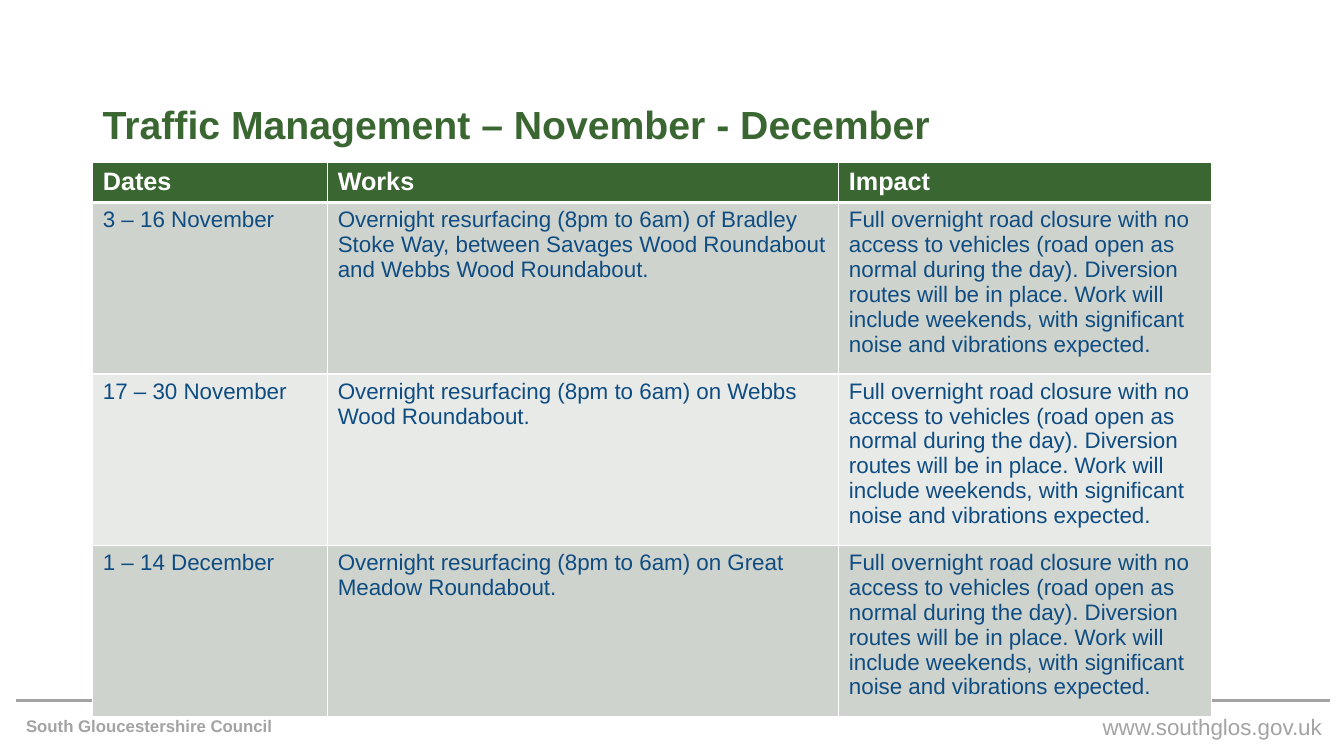
from lxml.etree import SubElement
from pptx import Presentation
from pptx.dml.color import RGBColor
from pptx.enum.shapes import MSO_CONNECTOR
from pptx.enum.text import MSO_ANCHOR, PP_ALIGN
from pptx.oxml.ns import qn
from pptx.util import Inches, Pt

COLOURS = {
    "green": "396631",
    "blue": "0F4C81",
    "grey": "A3A3A3",
    "white": "FFFFFF",
    "dark_band": "CED3CE",
    "light_band": "E8EAE8",
}
HEADINGS = ["Dates", "Works", "Impact"]
IMPACT = (
    "Full overnight road closure with no access to vehicles (road open as normal "
    "during the day). Diversion routes will be in place. Work will include weekends, "
    "with significant noise and vibrations expected."
)
CLOSURES = [
    (
        "3 – 16 November",
        "Overnight resurfacing (8pm to 6am) of Bradley Stoke Way, between "
        "Savages Wood Roundabout and Webbs Wood Roundabout.",
    ),
    ("17 – 30 November", "Overnight resurfacing (8pm to 6am) on Webbs Wood Roundabout."),
    ("1 – 14 December", "Overnight resurfacing (8pm to 6am) on Great Meadow Roundabout."),
]
COLUMN_WIDTHS = [2.33, 5.07, 3.7]
HEADING_HEIGHT = 0.38
CLOSURE_HEIGHT = 1.66


def colour(name):
    return RGBColor.from_string(COLOURS[name])


def write(frame, text, size, ink, bold=False, align=PP_ALIGN.LEFT, spacing=None):
    frame.word_wrap = True
    paragraph = frame.paragraphs[0]
    paragraph.alignment = align
    if spacing:
        paragraph.line_spacing = spacing
    run = paragraph.add_run()
    run.text = text
    run.font.name = "Arial"
    run.font.size = Pt(size)
    run.font.bold = bold
    run.font.color.rgb = colour(ink)


def add_label(slide, left, top, width, height, text, anchor=MSO_ANCHOR.MIDDLE, **style):
    label = slide.shapes.add_textbox(Inches(left), Inches(top), Inches(width), Inches(height))
    label.text_frame.vertical_anchor = anchor
    write(label.text_frame, text, **style)


def add_footer_rule(slide):
    rule = slide.shapes.add_connector(
        MSO_CONNECTOR.STRAIGHT, Inches(0.16), Inches(6.95), Inches(13.19), Inches(6.95)
    )
    rule.line.color.rgb = colour("grey")
    rule.line.width = Pt(0)
    SubElement(rule._element.spPr, qn("a:effectLst"))


def add_borders(cell, top, bottom):
    properties = cell._tc.get_or_add_tcPr()
    for side, width in (("L", 1), ("R", 1), ("T", top), ("B", bottom)):
        border = SubElement(properties, qn(f"a:ln{side}"), w=str(Pt(width)))
        fill = SubElement(border, qn("a:solidFill"))
        SubElement(fill, qn("a:srgbClr"), val=COLOURS["white"])


def fill_row(row, texts, band, top=1, bottom=1, **style):
    for cell, text in zip(row.cells, texts):
        add_borders(cell, top, bottom)
        cell.fill.solid()
        cell.fill.fore_color.rgb = colour(band)
        write(cell.text_frame, text, **style)


def add_closure_table(slide):
    height = HEADING_HEIGHT + CLOSURE_HEIGHT * len(CLOSURES)
    table = slide.shapes.add_table(
        len(CLOSURES) + 1,
        len(HEADINGS),
        Inches(0.92),
        Inches(1.61),
        Inches(sum(COLUMN_WIDTHS)),
        Inches(height),
    ).table
    for column, width in zip(table.columns, COLUMN_WIDTHS):
        column.width = Inches(width)
    heading_row, *closure_rows = table.rows
    heading_row.height = Inches(HEADING_HEIGHT)
    fill_row(heading_row, HEADINGS, "green", bottom=3, size=18, ink="white", bold=True)
    for index, (row, closure) in enumerate(zip(closure_rows, CLOSURES)):
        row.height = Inches(CLOSURE_HEIGHT)
        band = "light_band" if index % 2 else "dark_band"
        top = 1 if index else 3
        fill_row(row, (*closure, IMPACT), band, top=top, size=16, ink="blue")


def main():
    presentation = Presentation()
    presentation.slide_width = Inches(13.33)
    presentation.slide_height = Inches(7.5)
    slide = presentation.slides.add_slide(presentation.slide_layouts[6])
    add_footer_rule(slide)
    add_label(slide, 10.02, 7.03, 3.19, 0.37, "www.southglos.gov.uk",
              anchor=MSO_ANCHOR.TOP, size=16, ink="grey", align=PP_ALIGN.RIGHT)
    add_label(slide, 0.92, 0.53, 10.04, 1.45, "Traffic Management – November - December",
              size=28, ink="green", bold=True, spacing=0.9)
    add_closure_table(slide)
    add_label(slide, 0.16, 7.03, 4.5, 0.34, "South Gloucestershire Council",
              size=12, ink="grey", bold=True)
    presentation.save("out.pptx")


if __name__ == "__main__":
    main()
